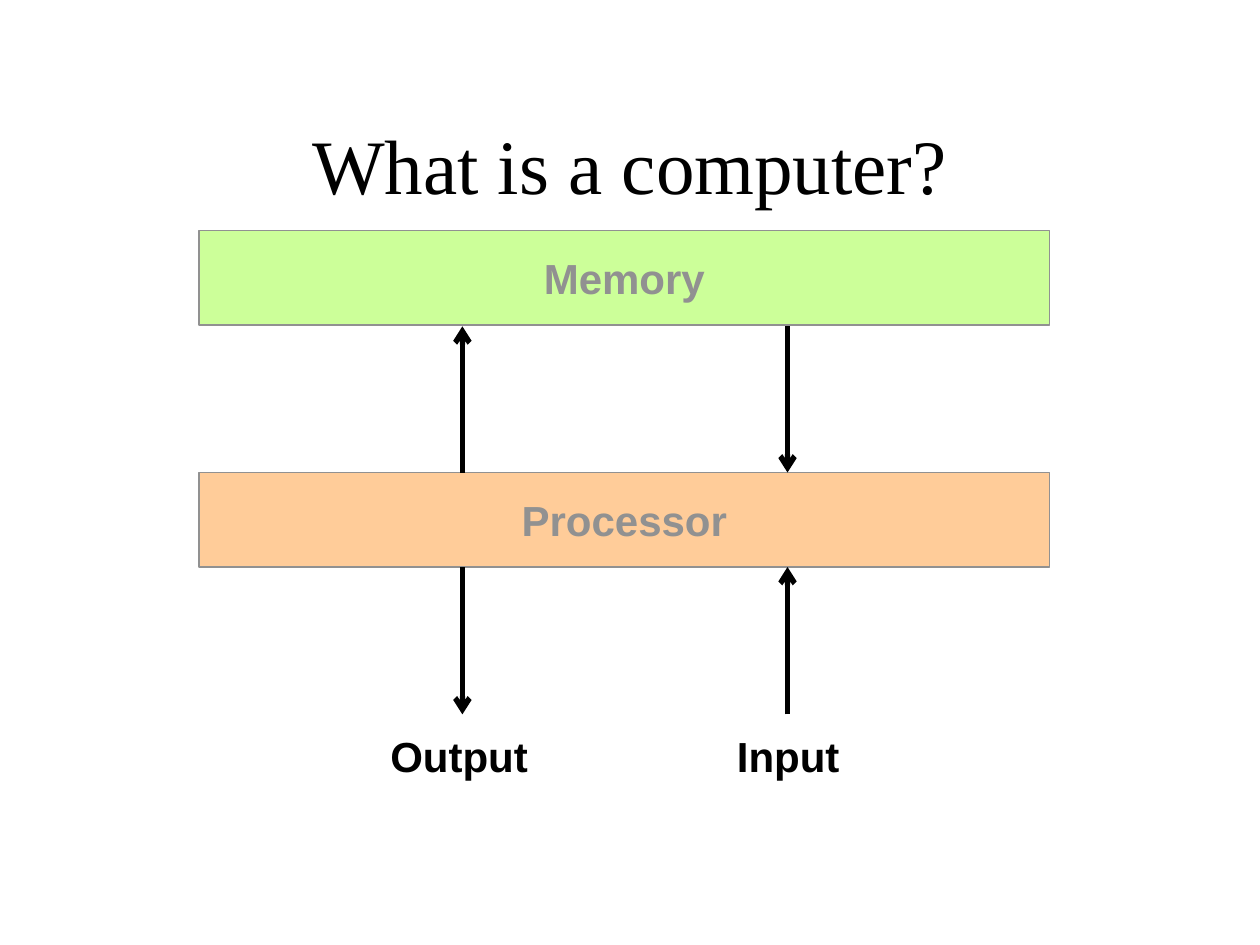
"""Build a slide showing memory, processor, input and output of a computer."""
from lxml import etree
from pptx import Presentation
from pptx.dml.color import RGBColor
from pptx.enum.shapes import MSO_CONNECTOR, MSO_SHAPE
from pptx.enum.text import MSO_ANCHOR, MSO_AUTO_SIZE, PP_ALIGN
from pptx.oxml.ns import qn
from pptx.util import Inches, Pt

BLACK = RGBColor(0x00, 0x00, 0x00)
GRAY = RGBColor(0x91, 0x91, 0x91)
GREEN = RGBColor(0xCC, 0xFF, 0x99)
ORANGE = RGBColor(0xFF, 0xCC, 0x99)


def write(frame, text, size, font_name, color, bold, align):
    frame.text = text
    paragraph = frame.paragraphs[0]
    paragraph.alignment = align
    font = paragraph.runs[0].font
    font.size = Pt(size)
    font.name = font_name
    font.bold = bold
    font.color.rgb = color


prs = Presentation()
prs.slide_width = Inches(10)
prs.slide_height = Inches(7.5)
slide = prs.slides.add_slide(prs.slide_layouts[6])

title = slide.shapes.add_textbox(Inches(0.75), Inches(0.67), Inches(8.5), Inches(1.25))
title.text_frame.word_wrap = True
title.text_frame.vertical_anchor = MSO_ANCHOR.MIDDLE
write(title.text_frame, "What is a computer?", 44, "Times New Roman", BLACK, False, PP_ALIGN.CENTER)

for name, top, color in [("Memory", 1.83, GREEN), ("Processor", 3.75, ORANGE)]:
    unit = slide.shapes.add_shape(
        MSO_SHAPE.RECTANGLE, Inches(1.58), Inches(top), Inches(6.75), Inches(0.75)
    )
    unit.shadow.inherit = False
    unit.fill.solid()
    unit.fill.fore_color.rgb = color
    unit.line.color.rgb = GRAY
    unit.line.width = Pt(0.75)
    unit.text_frame.vertical_anchor = MSO_ANCHOR.MIDDLE
    write(unit.text_frame, name, 24, "Arial", GRAY, True, PP_ALIGN.CENTER)

output_x, input_x = 3.67, 6.25
flows = [
    (output_x, 3.75, 2.59),
    (input_x, 2.59, 3.75),
    (input_x, 5.67, 4.5),
    (output_x, 4.5, 5.67),
]
for x, start, end in flows:
    flow = slide.shapes.add_connector(
        MSO_CONNECTOR.STRAIGHT, Inches(x), Inches(start), Inches(x), Inches(end)
    )
    flow.line.color.rgb = BLACK
    flow.line.width = Pt(3)
    etree.SubElement(flow.line._get_or_add_ln(), qn("a:tailEnd"), type="arrow")
    etree.SubElement(flow._element.spPr, qn("a:effectLst"))

for name, left, width in [("Output", 3, 1.3), ("Input", 5.75, 1.02)]:
    label = slide.shapes.add_textbox(Inches(left), Inches(5.75), Inches(width), Inches(0.51))
    label.text_frame.word_wrap = False
    label.text_frame.auto_size = MSO_AUTO_SIZE.SHAPE_TO_FIT_TEXT
    write(label.text_frame, name, 24, "Arial", BLACK, True, PP_ALIGN.LEFT)

prs.save("out.pptx")
